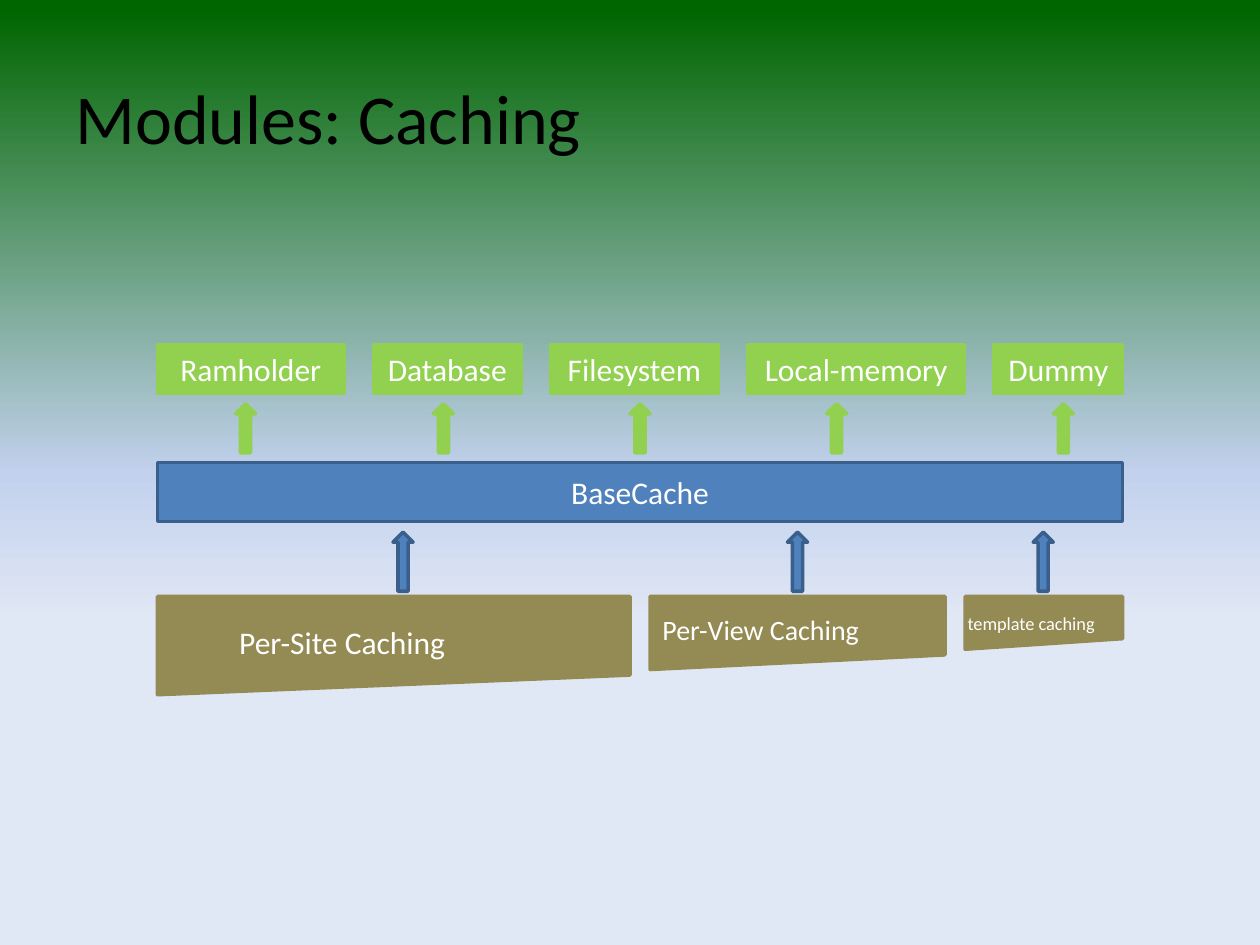
from copy import deepcopy
from pptx import Presentation
from pptx.dml.color import RGBColor
from pptx.enum.shapes import MSO_SHAPE
from pptx.enum.text import MSO_ANCHOR, PP_ALIGN
from pptx.oxml.ns import qn
from pptx.util import Pt

BLACK = RGBColor(0x00, 0x00, 0x00)
WHITE = RGBColor(0xFF, 0xFF, 0xFF)
GREEN = RGBColor(0x92, 0xD0, 0x50)
BLUE = RGBColor(0x4F, 0x81, 0xBD)
NAVY = RGBColor(0x3A, 0x5F, 0x8C)
OLIVE = RGBColor(0x94, 0x8A, 0x54)
STOPS = [
    (0.01, RGBColor(0x00, 0x66, 0x00)),
    (0.5, RGBColor(0xC2, 0xD1, 0xED)),
    (0.66, RGBColor(0xE1, 0xE8, 0xF5)),
]

LEFT = 90
WIDTH = 551.5
DRIVERS = [
    ("Ramholder", 106.6, 134.6),
    ("Database", 84.2, 247.7),
    ("Filesystem", 95.8, 360),
    ("Local-memory", 123.8, 472.3),
    ("Dummy", 73.4, 601.9),
]
CALLERS = [
    ("Per-Site Caching", 270, 56.2, 18, 39.6, 11.5, 224.6),
    ("Per-View Caching", 168.5, 41.8, 16, 0, 5.7, 450),
    ("template caching", 90, 30.2, 10.5, -5.7, 5.7, 590.4),
]


def write(shape, text, size, color, align, anchor):
    frame = shape.text_frame
    frame.word_wrap = True
    frame.vertical_anchor = anchor
    line = frame.paragraphs[0]
    line.text = text
    line.alignment = align
    line.font.name = "Calibri"
    line.font.size = Pt(size)
    line.font.color.rgb = color


def label(slide, text, size, color, box, anchor=MSO_ANCHOR.TOP):
    shape = slide.shapes.add_textbox(*map(Pt, box))
    write(shape, text, size, color, PP_ALIGN.LEFT, anchor)


def block(slide, kind, box, fill, edge, text=None):
    shape = slide.shapes.add_shape(kind, *map(Pt, box))
    shape.shadow.inherit = False
    shape.fill.solid()
    shape.fill.fore_color.rgb = fill
    shape.line.color.rgb = edge
    shape.line.width = Pt(2)
    if text:
        write(shape, text, 18, WHITE, PP_ALIGN.CENTER, MSO_ANCHOR.MIDDLE)
    return shape


def backdrop(slide):
    fill = slide.background.fill
    fill.gradient()
    fill.gradient_angle = 270
    stops = slide.element.find(".//" + qn("a:gsLst"))
    stops.append(deepcopy(stops[-1]))
    for stop, (place, color) in zip(fill.gradient_stops, STOPS):
        stop.position = place
        stop.color.rgb = color


def drivers(slide, left, top, width):
    gap = (width - sum(item[1] for item in DRIVERS)) / (len(DRIVERS) - 1)
    for text, wide, tip in DRIVERS:
        block(slide, MSO_SHAPE.RECTANGLE, (left, top, wide, 28.1), GREEN, GREEN, text)
        block(slide, MSO_SHAPE.UP_ARROW, (tip, top + 33.8, 11.5, 28.1), GREEN, GREEN)
        left += wide + gap


def callers(slide, left, top, width):
    gap = (width - sum(item[1] for item in CALLERS)) / (len(CALLERS) - 1)
    for text, wide, high, size, inset, drop, tip in CALLERS:
        shape = block(slide, MSO_SHAPE.FLOWCHART_MANUAL_INPUT,
                      (left, top, wide, high), OLIVE, OLIVE)
        shape.rotation = 180
        label(slide, text, size, WHITE, (left + inset, top + drop, min(wide + 6, 152), 28))
        block(slide, MSO_SHAPE.UP_ARROW, (tip, top - 36.7, 11.5, 33.8), BLUE, NAVY)
        left += wide + gap


def main():
    deck = Presentation()
    deck.slide_width, deck.slide_height = Pt(720), Pt(540)
    slide = deck.slides.add_slide(deck.slide_layouts[6])
    backdrop(slide)
    label(slide, "Modules: Caching", 40, BLACK, (36, 21.6, 648, 90), MSO_ANCHOR.MIDDLE)
    block(slide, MSO_SHAPE.RECTANGLE, (LEFT, 264.4, WIDTH, 33.8), BLUE, NAVY, "BaseCache")
    drivers(slide, LEFT, 196.9, WIDTH)
    callers(slide, LEFT, 340.8, WIDTH)
    deck.save("out.pptx")


if __name__ == "__main__":
    main()
